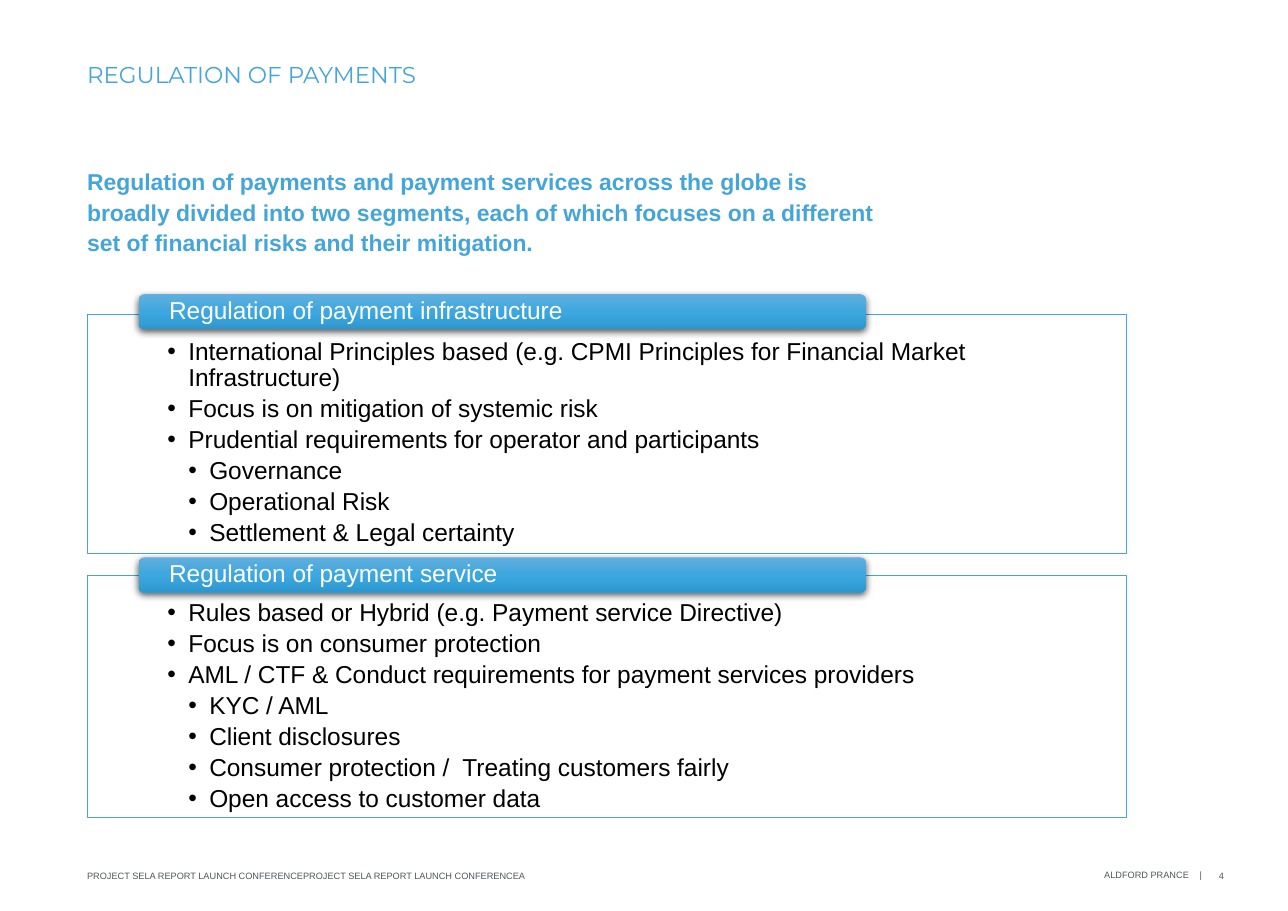
from lxml import etree
from pptx import Presentation
from pptx.dml.color import RGBColor
from pptx.enum.shapes import MSO_SHAPE as Shape
from pptx.enum.text import MSO_ANCHOR as Anchor, MSO_AUTO_SIZE as AutoSize, PP_ALIGN as Align
from pptx.oxml import parse_xml
from pptx.oxml.ns import nsdecls, qn
from pptx.util import Inches, Pt

TITLE = "REGULATION OF PAYMENTS"
INTRO = ("Regulation of payments and payment services across the globe is broadly divided "
         "into two segments, each of which focuses on a different set of financial risks "
         "and their mitigation.")

# Heading, tab top, panel top, panel height, (level, bullet text)
SEGMENTS = [
    ("Regulation of payment infrastructure", 2.67, 2.85, 2.17, [
        (1, "International Principles based (e.g. CPMI Principles for Financial Market Infrastructure)"),
        (1, "Focus is on mitigation of systemic risk"),
        (1, "Prudential requirements for operator and participants"),
        (2, "Governance"),
        (2, "Operational Risk"),
        (2, "Settlement & Legal certainty"),
    ]),
    ("Regulation of payment service", 5.06, 5.22, 2.2, [
        (1, "Rules based or Hybrid (e.g. Payment service Directive)"),
        (1, "Focus is on consumer protection"),
        (1, "AML / CTF & Conduct requirements for payment services providers"),
        (2, "KYC / AML"),
        (2, "Client disclosures"),
        (2, "Consumer protection /  Treating customers fairly"),
        (2, "Open access to customer data"),
    ]),
]

# Text, left, top, width, height, alignment, right inset
FOOTERS = [
    ("ALDFORD PRANCE", 8.28, 7.77, 2.62, 0.35, Align.RIGHT, 0.11),
    ("|", 10.71, 7.84, 0.2, 0.2, Align.RIGHT, 0),
    ("4", 10.6, 7.85, 0.51, 0.2, Align.RIGHT, 0),
    ("PROJECT SELA REPORT LAUNCH CONFERENCEPROJECT SELA REPORT LAUNCH CONFERENCEA",
     0.79, 7.85, 6.79, 0.2, Align.LEFT, 0.11),
]

BLUE, WHITE, BLACK, GREY = "44A5D8", "FFFFFF", "000000", "4E575C"
TAB_GRADIENT = [(0, "61AFDE"), (50, "3DA7DF"), (100, "2D97CF")]
LEFT, PANEL_WIDTH = 0.79, 9.43
TAB_LEFT, TAB_WIDTH, TAB_HEIGHT = 1.26, 6.6, 0.32
INDENT = 0.19


def color(hex_value):
    return RGBColor.from_string(hex_value)


def box(left, top, width, height):
    return [Inches(value) for value in (left, top, width, height)]


def place(shape, left, top, width, height):
    shape.left, shape.top, shape.width, shape.height = box(left, top, width, height)


def set_frame(shape, insets=(0, 0, 0, 0), anchor=Anchor.TOP):
    """Wrap the text and set its insets (left, top, right, bottom) and anchor."""
    frame = shape.text_frame
    frame.word_wrap = True
    frame.auto_size = AutoSize.NONE
    frame.vertical_anchor = anchor
    (frame.margin_left, frame.margin_top,
     frame.margin_right, frame.margin_bottom) = box(*insets)
    return frame


def style(paragraph, size, hex_value, font="Arial", bold=False, align=Align.LEFT, spacing=1.0, after=0):
    paragraph.alignment = align
    paragraph.line_spacing = spacing
    paragraph.space_before = Pt(0)
    paragraph.space_after = Pt(after)
    for run in paragraph.runs:
        run.font.name = font
        run.font.size = Pt(size)
        run.font.bold = bold
        run.font.color.rgb = color(hex_value)


def set_bullet(paragraph, character, indent_left=0.0, hanging=0.0):
    """Give the paragraph a bullet, or none if character is empty."""
    properties = paragraph._p.get_or_add_pPr()
    properties.set("marL", str(Inches(indent_left)))
    properties.set("indent", str(-Inches(hanging)))
    if character:
        font = etree.SubElement(properties, qn("a:buFont"))
        font.set("typeface", "Arial")
        etree.SubElement(properties, qn("a:buChar")).set("char", character)
    else:
        etree.SubElement(properties, qn("a:buNone"))


def add_panel(slide, top, height, items):
    panel = slide.shapes.add_shape(Shape.RECTANGLE, *box(LEFT, top, PANEL_WIDTH, height))
    panel.shadow.inherit = False
    panel.fill.solid()
    panel.fill.fore_color.rgb = color(WHITE)
    fill_color = panel.fill._xPr.find(qn("a:solidFill"))[0]
    etree.SubElement(fill_color, qn("a:alpha")).set("val", "90000")
    panel.line.color.rgb = color(BLUE)
    panel.line.width = Pt(0.5)
    frame = set_frame(panel, (0.73, 0.23, 0.73, 0.12))
    frame.text = "\n".join(text for _, text in items)
    for paragraph, (level, _) in zip(frame.paragraphs, items):
        paragraph.level = level
        style(paragraph, 16, BLACK, spacing=0.9, after=3)
        set_bullet(paragraph, "•", INDENT * level, INDENT)


def add_tab(slide, top, heading):
    tab = slide.shapes.add_shape(Shape.ROUNDED_RECTANGLE, *box(TAB_LEFT, top, TAB_WIDTH, TAB_HEIGHT))
    tab.line.fill.background()
    stops = "".join(f'<a:gs pos="{position * 1000}"><a:srgbClr val="{value}"/></a:gs>'
                    for position, value in TAB_GRADIENT)
    gradient = parse_xml(f'<a:gradFill {nsdecls("a")} rotWithShape="1"><a:gsLst>{stops}</a:gsLst>'
                         '<a:lin ang="5400000" scaled="0"/></a:gradFill>')
    shadow = parse_xml(f'<a:effectLst {nsdecls("a")}><a:outerShdw blurRad="{Pt(4.5)}" '
                       f'dist="{Pt(1.5)}" dir="5400000" rotWithShape="0"><a:srgbClr val="{BLACK}">'
                       '<a:alpha val="63000"/></a:srgbClr></a:outerShdw></a:effectLst>')
    line = tab._element.spPr.find(qn("a:ln"))
    line.addprevious(gradient)
    line.addnext(shadow)
    frame = set_frame(tab, (0.26, 0, 0.26, 0), Anchor.MIDDLE)
    frame.text = heading
    style(frame.paragraphs[0], 16, WHITE, spacing=0.9)


def main():
    presentation = Presentation()
    presentation.slide_width, presentation.slide_height = Inches(11.69), Inches(8.27)
    slide = presentation.slides.add_slide(presentation.slide_layouts[1])

    title, intro = slide.placeholders
    place(title, LEFT, 0.55, 6.79, 0.24)
    frame = set_frame(title)
    frame.text = TITLE
    style(frame.paragraphs[0], 15, BLUE, font="Montserrat")

    place(intro, LEFT, 1.5, 7.29, 1.01)
    frame = set_frame(intro)
    frame.text = INTRO
    style(frame.paragraphs[0], 15, BLUE, bold=True, spacing=1.1)
    set_bullet(frame.paragraphs[0], "")

    for heading, tab_top, panel_top, panel_height, items in SEGMENTS:
        add_panel(slide, panel_top, panel_height, items)
        add_tab(slide, tab_top, heading)

    for text, left, top, width, height, align, right_inset in FOOTERS:
        footer = slide.shapes.add_textbox(*box(left, top, width, height))
        frame = set_frame(footer, (0, 0, right_inset, 0), Anchor.MIDDLE)
        frame.text = text
        style(frame.paragraphs[0], 6, GREY, align=align)

    presentation.save("out.pptx")


if __name__ == "__main__":
    main()
